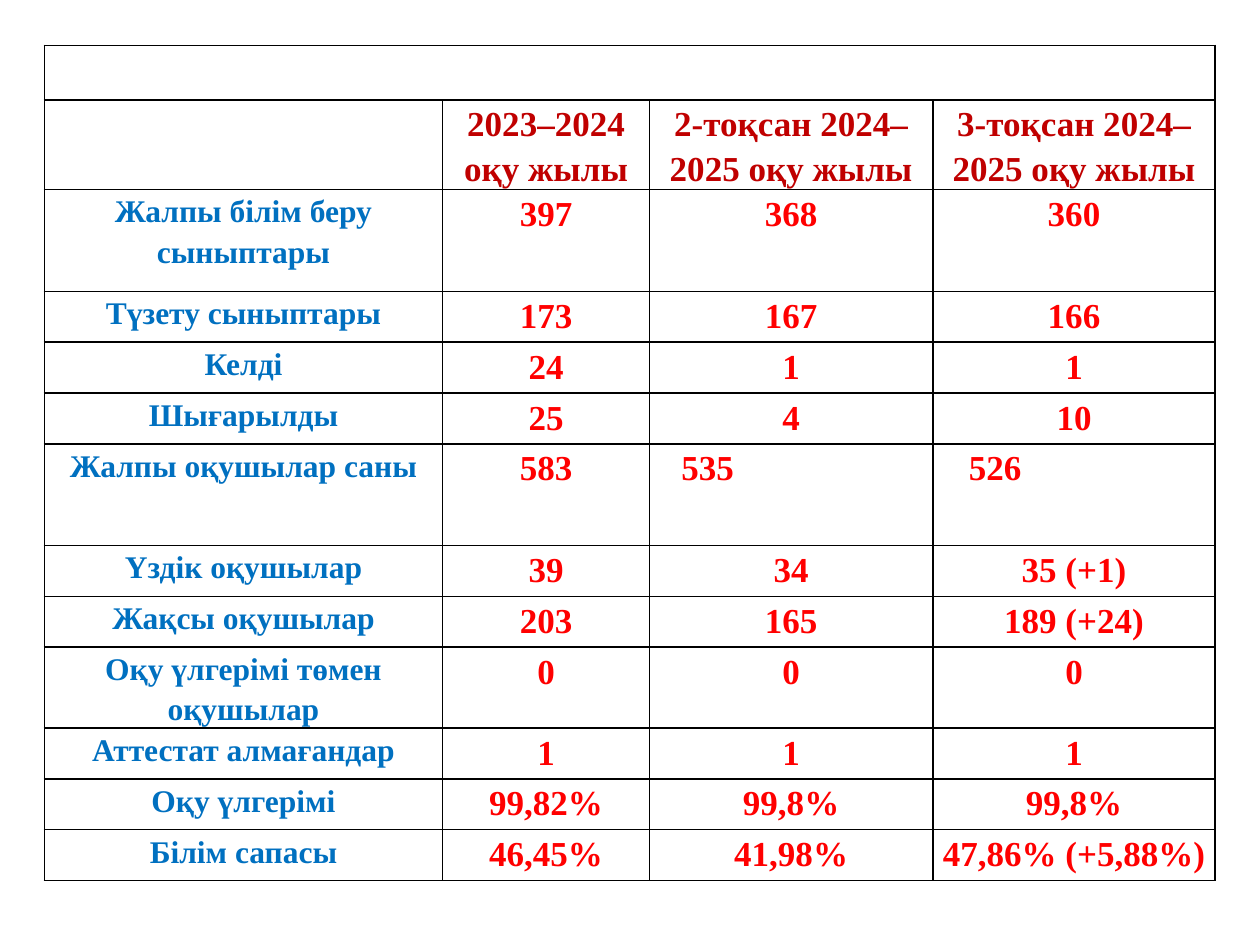
import pptx
import pptx.dml.color
import pptx.enum.text
import pptx.oxml
import pptx.oxml.ns
import pptx.util

Pt = pptx.util.Pt
RGBColor = pptx.dml.color.RGBColor
PP_ALIGN = pptx.enum.text.PP_ALIGN

HEADER_RED = RGBColor(0xC0, 0x00, 0x00)
LABEL_BLUE = RGBColor(0x00, 0x70, 0xC0)
VALUE_RED = RGBColor(0xFF, 0x00, 0x00)
BORDER_BLACK = RGBColor(0x00, 0x00, 0x00)

FONT = "Times New Roman"
INSET = 5
COLUMN_WIDTHS = [227.7, 118.1, 162, 161.3]
TITLE_HEIGHT, HEADER_HEIGHT = 31, 51.2
SINGLE, PAIR, DOUBLE = 29, 46.1, 58

HEADERS = ["", "2023–2024 оқу жылы", "2-тоқсан 2024–2025 оқу жылы", "3-тоқсан 2024–2025 оқу жылы"]
RESULTS = [
    (DOUBLE, "Жалпы білім беру сыныптары", "397", "368", "360"),
    (SINGLE, "Түзету сыныптары", "173", "167", "166"),
    (SINGLE, "Келді", "24", "1", "1"),
    (SINGLE, "Шығарылды", "25", "4", "10"),
    (DOUBLE, "Жалпы оқушылар саны", "583", "535", "526"),
    (SINGLE, "Үздік оқушылар", "39", "34", "35 (+1)"),
    (SINGLE, "Жақсы оқушылар", "203", "165", "189 (+24)"),
    (PAIR, "Оқу үлгерімі төмен оқушылар", "0", "0", "0"),
    (SINGLE, "Аттестат алмағандар", "1", "1", "1"),
    (SINGLE, "Оқу үлгерімі", "99,82%", "99,8%", "99,8%"),
    (SINGLE, "Білім сапасы", "46,45%", "41,98%", "47,86% (+5,88%)"),
]
LEFT_INDENTS = {"535": 18.3, "526": 20.5}


def set_borders(cell):
    """Draw a thin black line on all four sides of a cell."""
    tc_pr = cell._tc.get_or_add_tcPr()
    for i, side in enumerate(("lnL", "lnR", "lnT", "lnB")):
        line = pptx.oxml.parse_xml(
            f'<a:{side} {pptx.oxml.ns.nsdecls("a")} w="{Pt(1)}"><a:solidFill>'
            f'<a:srgbClr val="{BORDER_BLACK}"/></a:solidFill></a:{side}>'
        )
        tc_pr.insert(i, line)


def fill_cell(cell, text, size, color):
    """Write bold text in a cell, centred unless it has a left indent."""
    cell.text = text
    cell.margin_left = Pt(LEFT_INDENTS.get(text, INSET))
    cell.margin_right = Pt(INSET)
    cell.margin_top = cell.margin_bottom = 0
    p = cell.text_frame.paragraphs[0]
    p.alignment = PP_ALIGN.LEFT if text in LEFT_INDENTS else PP_ALIGN.CENTER
    p.line_spacing = 1.15
    p.font.name = FONT
    p.font.size = Pt(size)
    p.font.bold = True
    p.font.color.rgb = color


def add_results_table(s, left, top, width, height):
    """Place the pupil results table in the given box."""
    row_heights = [TITLE_HEIGHT, HEADER_HEIGHT] + [row[0] for row in RESULTS]
    frame = s.shapes.add_table(
        len(row_heights), len(COLUMN_WIDTHS), Pt(left), Pt(top), Pt(width), Pt(height)
    )
    table = frame.table
    for column, share in zip(table.columns, COLUMN_WIDTHS):
        column.width = Pt(width * share / sum(COLUMN_WIDTHS))
    for row, share in zip(table.rows, row_heights):
        row.height = Pt(height * share / sum(row_heights))
    for cell in table.iter_cells():
        cell.fill.background()
        set_borders(cell)
    table.cell(0, 0).merge(table.cell(0, len(COLUMN_WIDTHS) - 1))
    for c, text in enumerate(HEADERS):
        fill_cell(table.cell(1, c), text, 20, HEADER_RED)
    for r, (_, label, *values) in enumerate(RESULTS, 2):
        fill_cell(table.cell(r, 0), label, 18, LABEL_BLUE)
        for c, value in enumerate(values, 1):
            fill_cell(table.cell(r, c), value, 20, VALUE_RED)


def main():
    """Build the slide and save it."""
    prs = pptx.Presentation()
    prs.slide_width, prs.slide_height = Pt(720), Pt(540)
    s = prs.slides.add_slide(prs.slide_layouts[6])
    add_results_table(s, 25.3, 26, 669.1, 477.3)
    prs.save("out.pptx")


if __name__ == "__main__":
    main()
